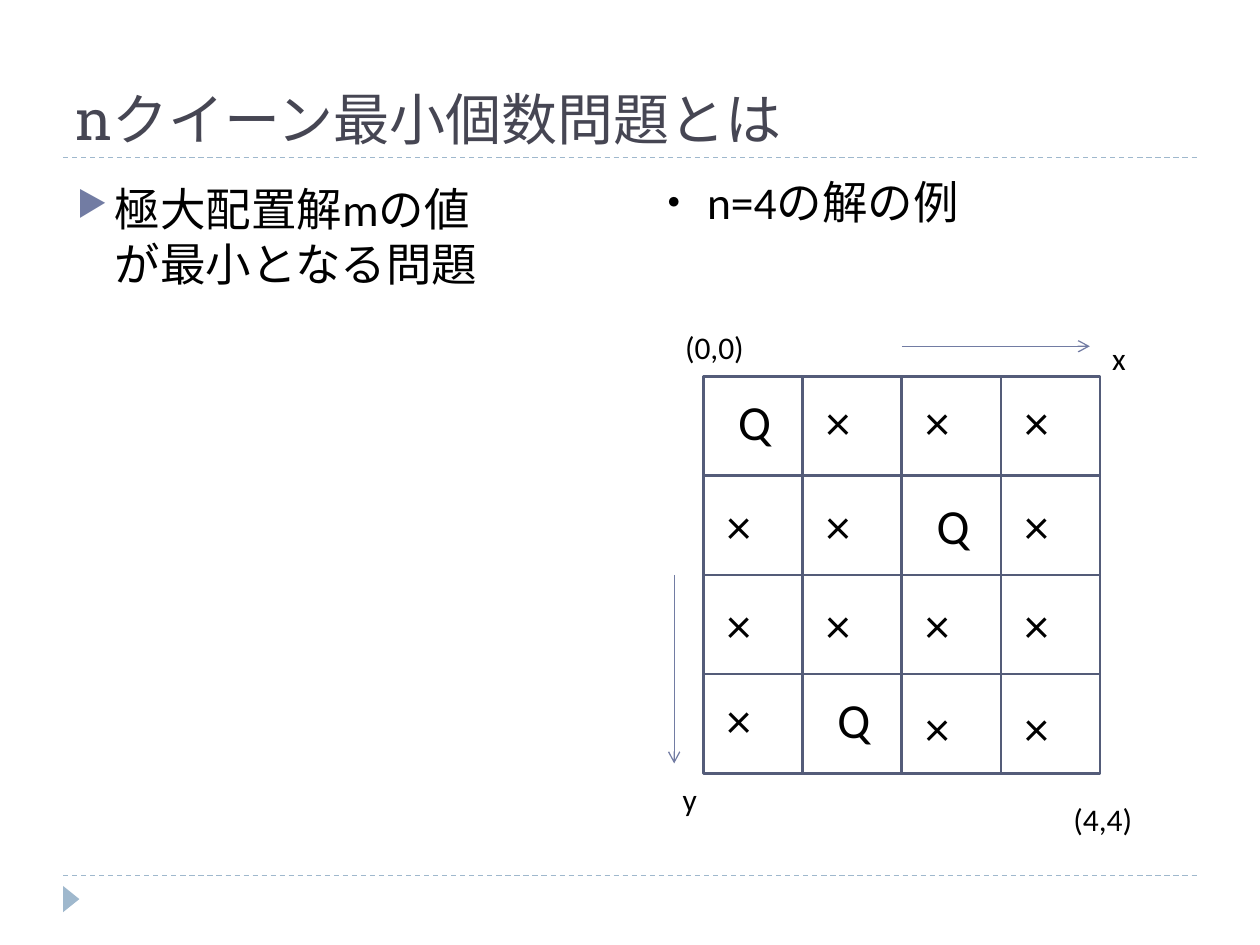
from lxml import etree
from pptx import Presentation
from pptx import util as u
from pptx.dml.color import RGBColor
from pptx.enum import dml, shapes, text
from pptx.oxml.ns import qn

Cm = u.Cm
BLACK, SLATE, EDGE, ARROW, PALE = "000000", "464653", "545C79", "727CA3", "9FB8CD"

TITLE = "nクイーン最小個数問題とは"
PROBLEM = "極大配置解mの値が最小となる問題"
EXAMPLE = "・ n=4の解の例"
BOARD = ["Q×××", "××Q×", "××××", "×Q××"]

# Board geometry in cm
LEFT, TOP, CELL = 14.18, 7.59, 2.0
MARK_DROP = [0.18, 0.27, 0.27, 0.18]   # mark box below the top of its row
LOW_MARKS = {(3, 2): 0.35, (3, 3): 0.35}
MARK_INDENT = {"Q": 0.45, "×": 0.22}

# text, left, top, width
LABELS = [
    ("(4,4)", 21.39, 16.0, 2.59),
    ("x", 22.17, 6.71, 1.17),
    ("y", 13.51, 15.6, 0.81),
    ("(0,0)", 13.56, 6.48, 2.13),
]
# x1, y1, x2, y2
RULES = [(1.27, y, 24.13, y) for y in (17.65, 3.18)]
AXES = [(18.18, 6.98, 21.97, 6.98), (13.59, 11.59, 13.59, 15.39)]


def rgb(value):
    return RGBColor.from_string(value)


def add_text(s, content, left, top, width, height, size,
             color=BLACK, font="Calibri", indent=0):
    """Add a one-paragraph text box and return its shape."""
    sp = s.shapes.add_textbox(Cm(left), Cm(top), Cm(width), Cm(height))
    tf = sp.text_frame
    tf.word_wrap = True
    tf.margin_left = Cm(0.25 + indent)
    p = tf.paragraphs[0]
    p.text = content
    p.font.size = u.Pt(size)
    p.font.name = font
    p.font.color.rgb = rgb(color)
    return sp


def add_shape(s, kind, left, top, width, height, fill, line=None):
    sp = s.shapes.add_shape(kind, Cm(left), Cm(top), Cm(width), Cm(height))
    sp.shadow.inherit = False
    sp.fill.solid()
    sp.fill.fore_color.rgb = rgb(fill)
    if line:
        sp.line.color.rgb = rgb(line)
        sp.line.width = u.Pt(1.5)
    else:
        sp.line.fill.background()
    return sp


def add_line(s, ends, color, dashed=False, arrow=False):
    sp = s.shapes.add_connector(shapes.MSO_CONNECTOR.STRAIGHT, *map(Cm, ends))
    sp.line.color.rgb = rgb(color)
    sp.line.width = u.Pt(0.75)
    if dashed:
        sp.line.dash_style = dml.MSO_LINE.DASH
    if arrow:
        etree.SubElement(sp.line._get_or_add_ln(), qn("a:tailEnd"), type="arrow")
    etree.SubElement(sp._element.spPr, qn("a:effectLst"))


def add_bullet(p, char, color, percent, indent):
    pPr = p._p.get_or_add_pPr()
    pPr.set("marL", str(Cm(indent)))
    pPr.set("indent", str(-Cm(indent)))
    clr = etree.Element(qn("a:buClr"))
    etree.SubElement(clr, qn("a:srgbClr"), val=color)
    size = etree.Element(qn("a:buSzPct"), val=str(percent * 1000))
    mark = etree.Element(qn("a:buChar"), char=char)
    at = 1 if pPr.find(qn("a:spcBef")) is not None else 0
    pPr[at:at] = [clr, size, mark]


def add_board(s):
    cells = [(r, c, mark) for r, row in enumerate(BOARD) for c, mark in enumerate(row)]
    for r, c, _ in cells:
        add_shape(s, shapes.MSO_SHAPE.RECTANGLE, LEFT + c * CELL, TOP + r * CELL,
                  CELL, CELL, "FFFFFF", EDGE)
    for r, c, mark in cells:
        drop = LOW_MARKS.get((r, c), MARK_DROP[r])
        add_text(s, mark, LEFT + c * CELL, TOP + r * CELL + drop, CELL, 1.45, 28,
                 indent=MARK_INDENT[mark])


def main():
    prs = Presentation()
    prs.slide_width, prs.slide_height = Cm(25.4), Cm(19.05)
    s = prs.slides.add_slide(prs.slide_layouts[6])

    for ends in RULES:
        add_line(s, ends, PALE, dashed=True)
    corner = add_shape(s, shapes.MSO_SHAPE.ISOSCELES_TRIANGLE, 1.17, 17.96, 0.53, 0.33, PALE)
    corner.rotation = 90

    title = add_text(s, TITLE, 1.27, 0.64, 22.86, 2.54, 32, SLATE, "Roboto Slab")
    title.text_frame.vertical_anchor = text.MSO_ANCHOR.BOTTOM

    problem = add_text(s, PROBLEM, 1.3, 3.53, 9.14, 12.57, 26)
    example = add_text(s, EXAMPLE, 12.88, 3.38, 11.23, 13.72, 26)
    for sp in (problem, example):
        sp.text_frame.paragraphs[0].space_before = u.Pt(6)
    add_bullet(problem.text_frame.paragraphs[0], "▶", ARROW, 76, 0.76)

    add_board(s)
    for ends in AXES:
        add_line(s, ends, ARROW, arrow=True)
    for label, left, top, width in LABELS:
        add_text(s, label, left, top, width, 1.02, 18)

    prs.save("out.pptx")


if __name__ == "__main__":
    main()
